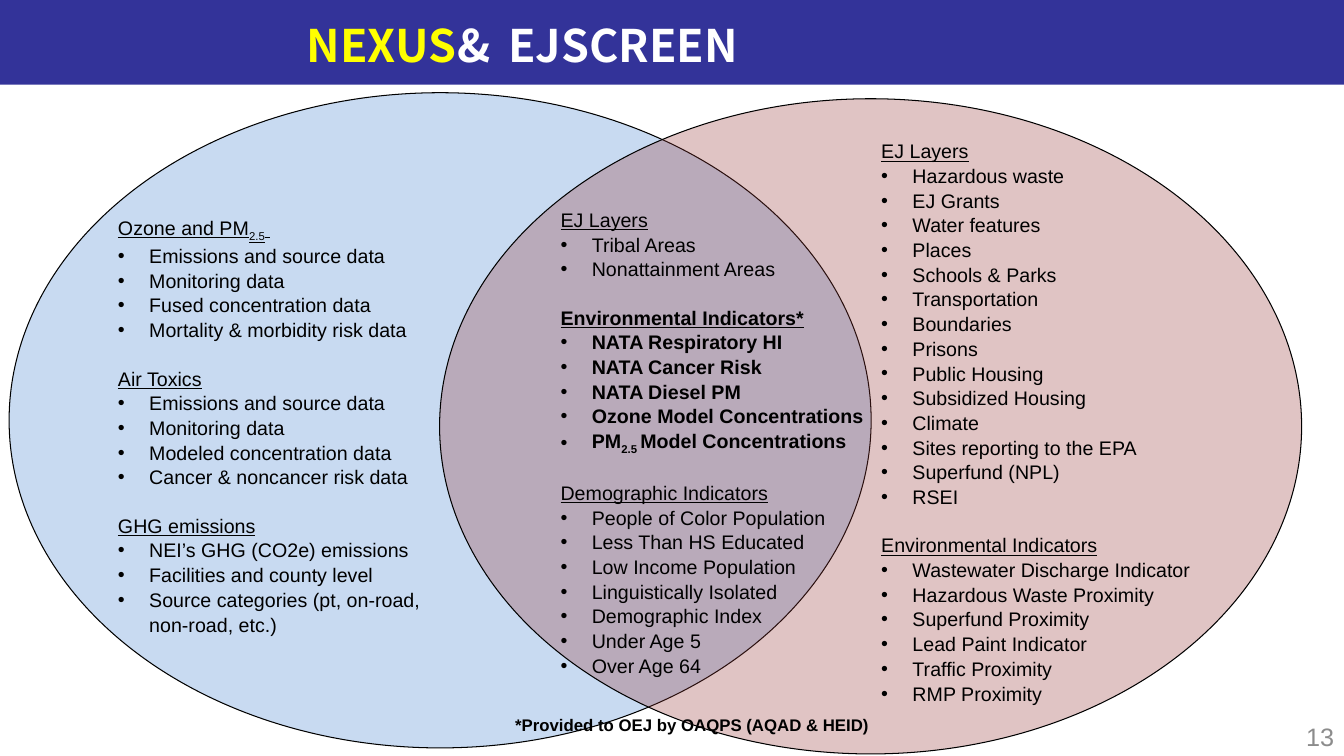
from dataclasses import dataclass
from typing import NamedTuple

from lxml import etree
from pptx import Presentation
from pptx.dml.color import RGBColor
from pptx.enum.shapes import MSO_SHAPE
from pptx.enum.text import MSO_ANCHOR, MSO_AUTO_SIZE, PP_ALIGN
from pptx.oxml.ns import qn
from pptx.util import Emu, Pt

RECTANGLE, OVAL = MSO_SHAPE.RECTANGLE, MSO_SHAPE.OVAL
TOP, MIDDLE = MSO_ANCHOR.TOP, MSO_ANCHOR.MIDDLE
LEFT, RIGHT = PP_ALIGN.LEFT, PP_ALIGN.RIGHT
NO_AUTOFIT = MSO_AUTO_SIZE.NONE
EMU_PER_PX = 9144
COMPARISON_LAYOUT = 4


@dataclass(frozen=True)
class Theme:
    band: str = "333399"
    nexus_title: str = "FFFF00"
    title: str = "FFFFFF"
    text: str = "000000"
    page_number: str = "8C8C8C"
    nexus: str = "558ED5"
    ejscreen: str = "953735"
    title_font: str = "Noto Sans CJK SC"
    body_font: str = "Arial"
    title_size: int = 32
    list_size: int = 14
    note_size: int = 12
    page_number_size: int = 18
    outline_width: float = 0.75
    line_spacing: float = 1.05
    section_gap: int = 17


THEME = Theme()


class Box(NamedTuple):
    left: int
    top: int
    width: int
    height: int


class Part(NamedTuple):
    text: str
    subscript: bool = False


class Section(NamedTuple):
    heading: tuple[Part, ...]
    items: tuple[tuple[Part, ...], ...]
    bold: bool = False


class Circle(NamedTuple):
    box: Box
    color: str
    opacity: int


class Column(NamedTuple):
    placeholder: int
    box: Box
    sections: tuple[Section, ...]


def plain(*lines: str) -> tuple[tuple[Part, ...], ...]:
    return tuple((Part(line),) for line in lines)


def section(heading: str, *items: str) -> Section:
    return Section((Part(heading),), plain(*items))


SLIDE = Box(0, 0, 1333, 750)
BAND = Box(0, 0, 1333, 84)
TITLE = Box(0, 8, 1333, 73)
TITLE_INSET = 304
TITLE_TABS = (329, 500)
BULLET_INDENT = 31
NOTE = Box(501, 704, 375, 30)
NOTE_PLACEHOLDER = 3
PAGE_NUMBER = Box(1100, 711, 233, 40)

CIRCLES = (
    Circle(Box(9, 92, 855, 650), THEME.nexus, 32),
    Circle(Box(436, 98, 855, 650), THEME.ejscreen, 29),
)

COLUMNS = (
    Column(1, Box(546, 200, 341, 481), (
        section("EJ Layers", "Tribal Areas", "Nonattainment Areas"),
        Section(
            (Part("Environmental Indicators*"),),
            plain("NATA Respiratory HI", "NATA Cancer Risk", "NATA Diesel PM",
                  "Ozone Model Concentrations")
            + ((Part("PM"), Part("2.5 ", True), Part("Model Concentrations")),),
            bold=True),
        section("Demographic Indicators", "People of Color Population",
                "Less Than HS Educated", "Low Income Population",
                "Linguistically Isolated", "Demographic Index",
                "Under Age 5", "Over Age 64"),
    )),
    Column(4, Box(864, 132, 667, 552), (
        section("EJ Layers", "Hazardous waste", "EJ Grants", "Water features",
                "Places", "Schools & Parks", "Transportation", "Boundaries",
                "Prisons", "Public Housing", "Subsidized Housing", "Climate",
                "Sites reporting to the EPA", "Superfund (NPL)", "RSEI"),
        section("Environmental Indicators", "Wastewater Discharge Indicator",
                "Hazardous Waste Proximity", "Superfund Proximity",
                "Lead Paint Indicator", "Traffic Proximity", "RMP Proximity"),
    )),
    Column(2, Box(107, 208, 321, 559), (
        Section(
            (Part("Ozone and PM"), Part("2.5", True), Part(" ")),
            plain("Emissions and source data", "Monitoring data",
                  "Fused concentration data", "Mortality & morbidity risk data")),
        section("Air Toxics", "Emissions and source data", "Monitoring data",
                "Modeled concentration data", "Cancer & noncancer risk data"),
        section("GHG emissions", "NEI’s GHG (CO2e) emissions",
                "Facilities and county level",
                "Source categories (pt, on-road, non-road, etc.)"),
    )),
)


def px(length: int) -> Emu:
    return Emu(length * EMU_PER_PX)


def place(shape, box: Box) -> None:
    shape.left, shape.top, shape.width, shape.height = map(px, box)


def prepare_frame(shape, anchor, wrap: bool = True):
    frame = shape.text_frame
    frame.auto_size = NO_AUTOFIT
    frame.word_wrap = wrap
    frame.vertical_anchor = anchor
    return frame


def add_run(paragraph, text: str, size: int, color: str,
            font_name: str = THEME.body_font, bold: bool = False):
    run = paragraph.add_run()
    run.text = text
    font = run.font
    font.name, font.size, font.bold = font_name, Pt(size), bold
    font.color.rgb = RGBColor.from_string(color)
    return run


def format_paragraph(paragraph, bullet: bool = False, gap: int = 0,
                     line_spacing: float = 1.0) -> None:
    paragraph.alignment = LEFT
    paragraph.line_spacing = line_spacing
    paragraph.space_before, paragraph.space_after = Pt(gap), Pt(0)
    properties = paragraph._p.get_or_add_pPr()
    indent = px(BULLET_INDENT) if bullet else 0
    properties.set("marL", str(indent))
    properties.set("indent", str(-indent))
    if bullet:
        etree.SubElement(properties, qn("a:buFont"), typeface=THEME.body_font)
        etree.SubElement(properties, qn("a:buChar"), char="•")
    else:
        etree.SubElement(properties, qn("a:buNone"))


def add_panel(slide, kind, box: Box, color: str, opacity: int = 100):
    """Draw a filled, unlined shape behind the title and the lists."""
    shape = slide.shapes.add_shape(kind, *map(px, box))
    shape.shadow.inherit = False
    shape.fill.solid()
    shape.fill.fore_color.rgb = RGBColor.from_string(color)
    shape.line.fill.background()
    if opacity < 100:
        fill_color = shape.element.spPr.find(f"{qn('a:solidFill')}/{qn('a:srgbClr')}")
        etree.SubElement(fill_color, qn("a:alpha"), val=str(opacity * 1000))
    slide.shapes.title.element.addprevious(shape.element)
    return shape


def add_circle(slide, circle: Circle) -> None:
    shape = add_panel(slide, OVAL, circle.box, circle.color, circle.opacity)
    shape.line.color.rgb = RGBColor.from_string(THEME.text)
    shape.line.width = Pt(THEME.outline_width)


def fill_title(title) -> None:
    place(title, TITLE)
    frame = prepare_frame(title, MIDDLE)
    frame.margin_left = px(TITLE_INSET)
    paragraph = frame.paragraphs[0]
    format_paragraph(paragraph)
    tabs = etree.SubElement(paragraph._p.get_or_add_pPr(), qn("a:tabLst"))
    for position in TITLE_TABS:
        etree.SubElement(tabs, qn("a:tab"), pos=str(px(position)), algn="l")
    for text, color in (("NEXUS", THEME.nexus_title), ("\t&\tEJSCREEN", THEME.title)):
        add_run(paragraph, text, THEME.title_size, color, THEME.title_font, True)


def fill_column(shape, column: Column) -> None:
    place(shape, column.box)
    frame = prepare_frame(shape, TOP)
    paragraph = frame.paragraphs[0]
    for number, group in enumerate(column.sections):
        for row, parts in enumerate((group.heading, *group.items)):
            if number or row:
                paragraph = frame.add_paragraph()
            is_heading = row == 0
            gap = THEME.section_gap if is_heading and number else 0
            format_paragraph(paragraph, not is_heading, gap, THEME.line_spacing)
            for part in parts:
                run = add_run(paragraph, part.text, THEME.list_size, THEME.text,
                              bold=group.bold)
                run.font.underline = is_heading
                if part.subscript:
                    run.font._element.set("baseline", "-25000")


def fill_note(shape) -> None:
    place(shape, NOTE)
    paragraph = prepare_frame(shape, TOP, wrap=False).paragraphs[0]
    format_paragraph(paragraph)
    add_run(paragraph, "*Provided to OEJ by OAQPS (AQAD & HEID)",
            THEME.note_size, THEME.text, bold=True)


def add_page_number(slide) -> None:
    shape = slide.shapes.add_textbox(*map(px, PAGE_NUMBER))
    paragraph = prepare_frame(shape, MIDDLE).paragraphs[0]
    paragraph.alignment = RIGHT
    add_run(paragraph, "13", THEME.page_number_size, THEME.page_number)


def main() -> None:
    presentation = Presentation()
    presentation.slide_width, presentation.slide_height = px(SLIDE.width), px(SLIDE.height)
    slide = presentation.slides.add_slide(presentation.slide_layouts[COMPARISON_LAYOUT])
    placeholders = slide.placeholders
    add_panel(slide, RECTANGLE, BAND, THEME.band)
    for circle in CIRCLES:
        add_circle(slide, circle)
    fill_title(slide.shapes.title)
    for column in COLUMNS:
        fill_column(placeholders[column.placeholder], column)
    fill_note(placeholders[NOTE_PLACEHOLDER])
    add_page_number(slide)
    presentation.save("out.pptx")


if __name__ == "__main__":
    main()
